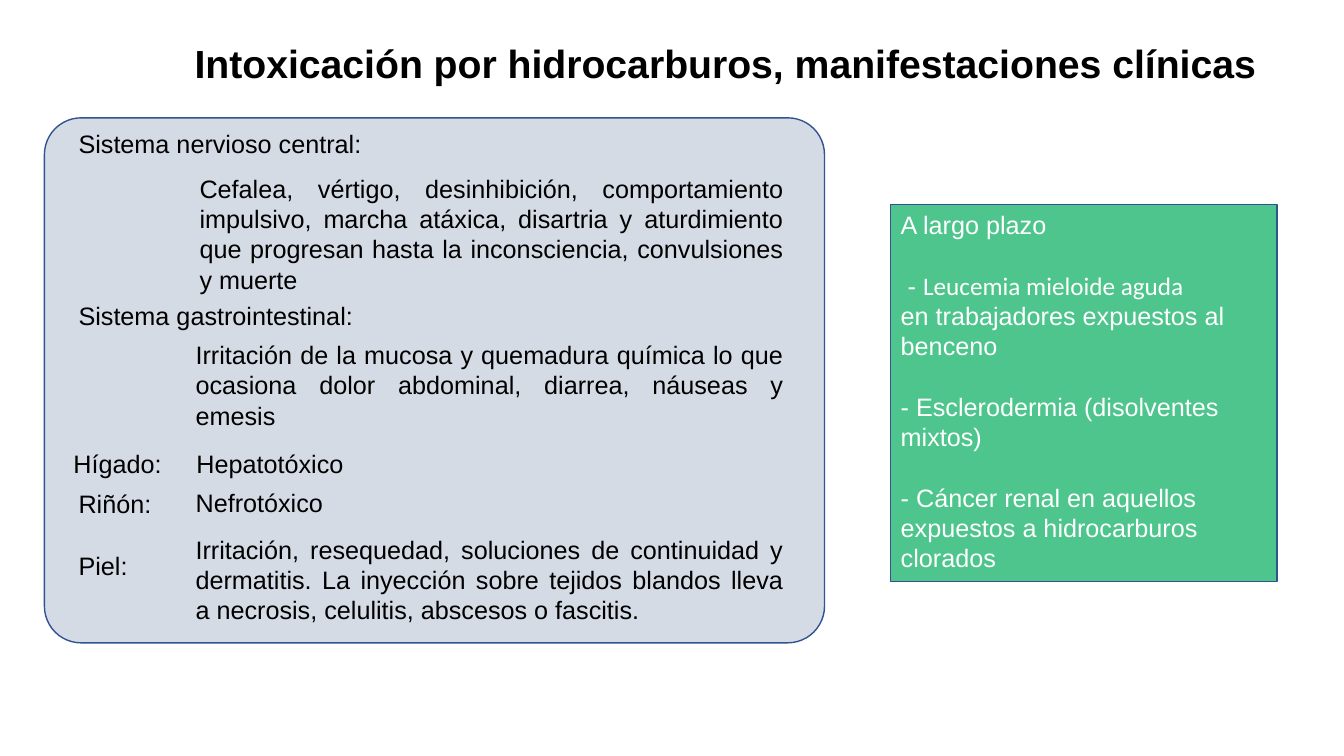
from dataclasses import dataclass

from lxml.etree import SubElement
from pptx import Presentation
from pptx.dml.color import RGBColor
from pptx.enum.shapes import MSO_SHAPE
from pptx.enum.text import MSO_ANCHOR, MSO_AUTO_SIZE, PP_ALIGN
from pptx.oxml.ns import qn
from pptx.util import Cm, Pt


@dataclass(frozen=True)
class Theme:
    ink: RGBColor = RGBColor(0x00, 0x00, 0x00)
    light: RGBColor = RGBColor(0xFF, 0xFF, 0xFF)
    panel: RGBColor = RGBColor(0xD5, 0xDB, 0xE5)
    accent: RGBColor = RGBColor(0x4D, 0xC5, 0x8D)
    outline: RGBColor = RGBColor(0x31, 0x53, 0x8F)
    face: str = "Arial"
    alternate_face: str = "Calibri"
    title_size: Pt = Pt(28)
    body_size: Pt = Pt(18)
    paragraph_gap: Pt = Pt(21.6)


THEME = Theme()
TITLE = "Intoxicación por hidrocarburos, manifestaciones clínicas"
LABEL_LEFT, LABEL_WIDTH = 0.61, 17.07
DETAIL_LEFT, DETAIL_RIGHT = 3.56, 18.87
LINE_HEIGHT = 1.02

# Text, left, top, right, height in cm within the panel
SYMPTOMS = [
    ("Sistema nervioso central:", LABEL_LEFT, 0.15, LABEL_LEFT + LABEL_WIDTH, LINE_HEIGHT),
    ("Cefalea, vértigo, desinhibición, comportamiento impulsivo, marcha atáxica, "
     "disartria y aturdimiento que progresan hasta la inconsciencia, convulsiones "
     "y muerte", 3.66, 1.27, DETAIL_RIGHT, 3.33),
    ("Sistema gastrointestinal:", LABEL_LEFT, 4.47, LABEL_LEFT + LABEL_WIDTH, LINE_HEIGHT),
    ("Irritación de la mucosa y quemadura química lo que ocasiona dolor abdominal, "
     "diarrea, náuseas y emesis", DETAIL_LEFT, 5.46, DETAIL_RIGHT, 2.57),
    ("Hígado:\tHepatotóxico", 0.48, 8.2, 15.8, LINE_HEIGHT),
    ("Riñón:", LABEL_LEFT, 9.22, LABEL_LEFT + LABEL_WIDTH, LINE_HEIGHT),
    ("Nefrotóxico", DETAIL_LEFT, 9.19, DETAIL_RIGHT, LINE_HEIGHT),
    ("Piel:", LABEL_LEFT, 10.77, LABEL_LEFT + LABEL_WIDTH, LINE_HEIGHT),
    ("Irritación, resequedad, soluciones de continuidad y dermatitis. La inyección "
     "sobre tejidos blandos lleva a necrosis, celulitis, abscesos o fascitis.",
     DETAIL_LEFT, 10.36, DETAIL_RIGHT, 2.57),
]

# Runs of each paragraph, and whether a gap precedes it
LONG_TERM = [
    ([("A largo plazo", THEME.face)], False),
    ([(" - ", THEME.face), ("Leucemia mieloide aguda", THEME.alternate_face)], True),
    ([("en trabajadores expuestos al benceno", THEME.face)], False),
    ([("- Esclerodermia\N{NO-BREAK SPACE}(disolventes mixtos)", THEME.face)], True),
    ([("- Cáncer renal en aquellos expuestos a hidrocarburos clorados", THEME.face)], True),
]


def apply(target, values):
    for name, value in values.items():
        setattr(target, name, value)


def style_font(font, color, size=THEME.body_size, face=THEME.face, bold=False):
    apply(font, {"name": face, "size": size, "bold": bold})
    font.color.rgb = color


def add_box(shapes, kind, box, fill, outlined=False):
    shape = shapes.add_shape(kind, *map(Cm, box))
    shape.shadow.inherit = False
    shape.fill.solid()
    shape.fill.fore_color.rgb = fill
    if outlined:
        shape.line.color.rgb = THEME.outline
        shape.line.width = Pt(1)
    else:
        shape.line.fill.background()
    apply(shape.text_frame, {
        "word_wrap": True,
        "auto_size": MSO_AUTO_SIZE.NONE,
        "vertical_anchor": MSO_ANCHOR.TOP,
    })
    return shape


def add_title(slide, box):
    title = slide.shapes.title
    apply(title, dict(zip(("left", "top", "width", "height"), map(Cm, box))))
    title.text_frame.text = TITLE
    apply(title.text_frame, {"word_wrap": True, "vertical_anchor": MSO_ANCHOR.MIDDLE})
    paragraph = title.text_frame.paragraphs[0]
    apply(paragraph, {"alignment": PP_ALIGN.LEFT, "line_spacing": 0.9})
    style_font(paragraph.font, THEME.ink, THEME.title_size, bold=True)


def add_tab_stop(paragraph, position):
    stops = SubElement(paragraph._p.get_or_add_pPr(), qn("a:tabLst"))
    SubElement(stops, qn("a:tab"), pos=str(position), algn="l")


def add_symptom_panel(slide, box):
    panel_left, panel_top = box[:2]
    shapes = slide.shapes.add_group_shape().shapes
    panel = add_box(shapes, MSO_SHAPE.ROUNDED_RECTANGLE, box, THEME.panel, outlined=True)
    panel.adjustments[0] = 0.07
    for text, left, top, right, height in SYMPTOMS:
        place = (panel_left + left, panel_top + top, right - left, height)
        entry = add_box(shapes, MSO_SHAPE.RECTANGLE, place, THEME.panel)
        entry.text_frame.auto_size = MSO_AUTO_SIZE.SHAPE_TO_FIT_TEXT
        paragraph = entry.text_frame.paragraphs[0]
        paragraph.text = text
        paragraph.alignment = PP_ALIGN.JUSTIFY
        if "\t" in text:
            add_tab_stop(paragraph, Cm(3.1))
        style_font(paragraph.font, THEME.ink)


def add_long_term_box(slide, box):
    effects = add_box(slide.shapes, MSO_SHAPE.RECTANGLE, box, THEME.accent, outlined=True)
    frame = effects.text_frame
    frame.auto_size = MSO_AUTO_SIZE.SHAPE_TO_FIT_TEXT
    for index, (runs, spaced) in enumerate(LONG_TERM):
        paragraph = frame.add_paragraph() if index else frame.paragraphs[0]
        paragraph.alignment = PP_ALIGN.LEFT
        if spaced:
            paragraph.space_before = THEME.paragraph_gap
        for text, face in runs:
            run = paragraph.add_run()
            run.text = text
            style_font(run.font, THEME.light, face=face)


def main():
    deck = Presentation()
    apply(deck, {"slide_width": Cm(33.87), "slide_height": Cm(19.05)})
    slide = deck.slides.add_slide(deck.slide_layouts[5])
    add_title(slide, (4.65, 0.33, 29.22, 2.64))
    add_long_term_box(slide, (22.45, 5.16, 9.73, 9.5))
    add_symptom_panel(slide, (1.12, 2.97, 19.66, 13.23))
    deck.save("out.pptx")


if __name__ == "__main__":
    main()
